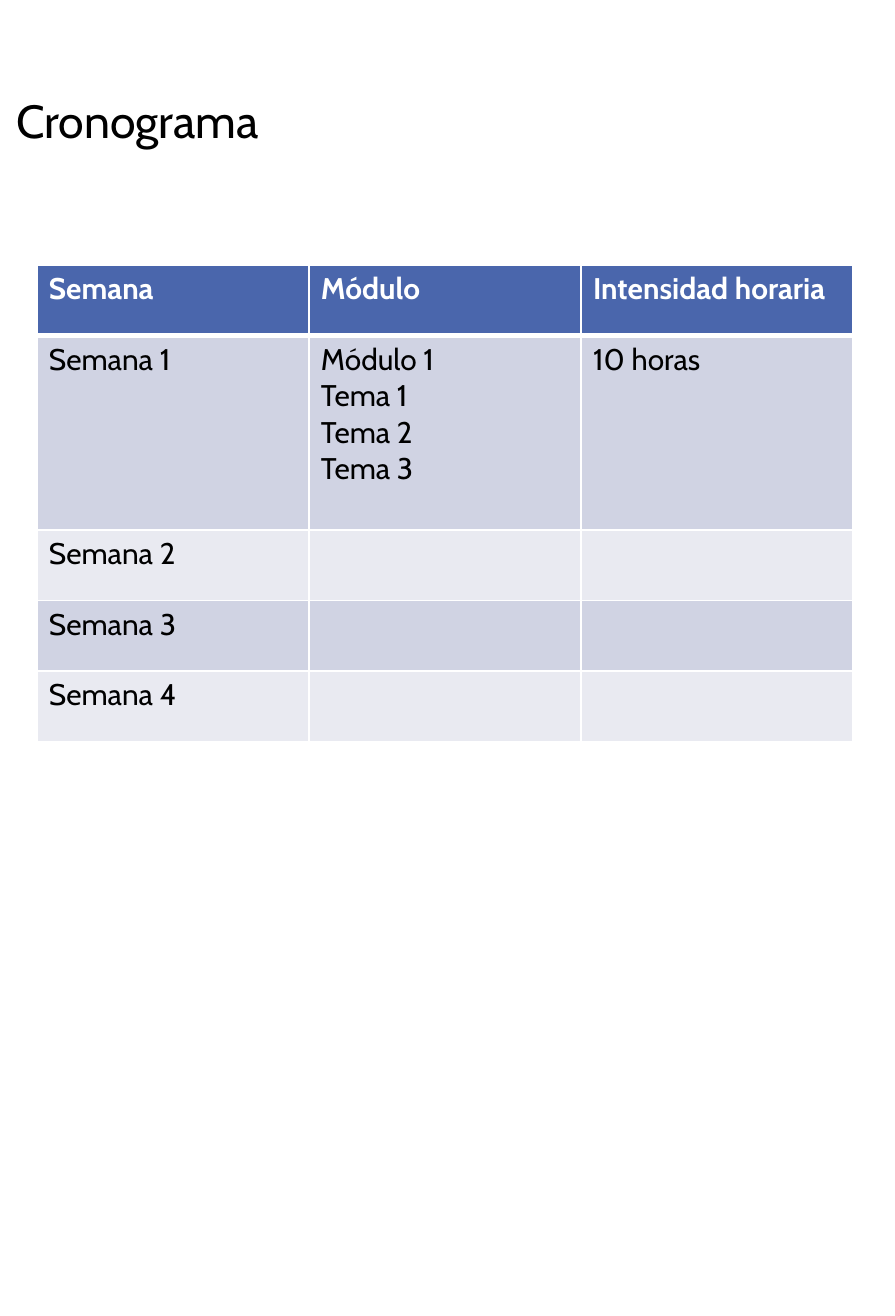
from lxml import etree
from pptx import Presentation
from pptx.dml.color import RGBColor
from pptx.enum import text
from pptx.oxml import ns
from pptx.util import Inches, Pt

FONT = "Cabin"
WHITE, BLACK, BLUE = "FFFFFF", "000000", "4A66AC"
BANDS = ["D0D3E3", "E9EAF1"]
CM_PER_INCH = 2.54


def style_font(font, size, color, bold=False):
    values = {"name": FONT, "size": Pt(size), "bold": bold}
    for name, value in values.items():
        setattr(font, name, value)
    font.color.rgb = RGBColor.from_string(color)


def add_border(cell, side, width):
    """Draw a white line on one side (L, R, T or B) of a cell."""
    properties = cell._tc.get_or_add_tcPr()
    line = etree.SubElement(properties, ns.qn(f"a:ln{side}"), w=str(Pt(width)))
    fill = etree.SubElement(line, ns.qn("a:solidFill"))
    etree.SubElement(fill, ns.qn("a:srgbClr"), val=WHITE)


presentation = Presentation()
presentation.slide_width = Inches(7.5)
presentation.slide_height = Inches(28 / CM_PER_INCH)
# The default template is marked as 4:3, which this portrait page is not
presentation.element.sldSz.attrib.pop("type", None)
slide = presentation.slides.add_slide(presentation.slide_layouts[6])

# Title
title = slide.shapes.add_textbox(Inches(0.04), Inches(0.62), Inches(7.44), Inches(0.82))
frame = title.text_frame
frame.word_wrap = True
frame.vertical_anchor = text.MSO_ANCHOR.MIDDLE
paragraph = frame.paragraphs[0]
paragraph.text = "Cronograma"
paragraph.line_spacing = 0.9
style_font(paragraph.font, 28, BLACK)

# Schedule
schedule = [
    ["Semana", "Módulo", "Intensidad horaria"],
    ["Semana 1", "Módulo 1\nTema 1\nTema 2\nTema 3", "10 horas"],
    ["Semana 2", "", ""],
    ["Semana 3", "", ""],
    ["Semana 4", "", ""],
]
row_heights = [0.59, 1.63, 0.59, 0.59, 0.59]
table = slide.shapes.add_table(
    len(schedule), len(schedule[0]), Inches(0.31), Inches(2.22),
    Inches(6.84), Inches(sum(row_heights))).table

for row, height in zip(table.rows, row_heights):
    row.height = Inches(height)

for row_index, entries in enumerate(schedule):
    is_header = row_index == 0
    for column_index, entry in enumerate(entries):
        cell = table.cell(row_index, column_index)
        widths = {"L": 1, "R": 1, "T": 3 if row_index == 1 else 1, "B": 3 if is_header else 1}
        for side, width in widths.items():
            add_border(cell, side, width)
        cell.fill.solid()
        color = BLUE if is_header else BANDS[(row_index - 1) % 2]
        cell.fill.fore_color.rgb = RGBColor.from_string(color)
        cell.text = entry
        for paragraph in cell.text_frame.paragraphs:
            style_font(paragraph.font, 18, WHITE if is_header else BLACK, is_header)

presentation.save("out.pptx")
